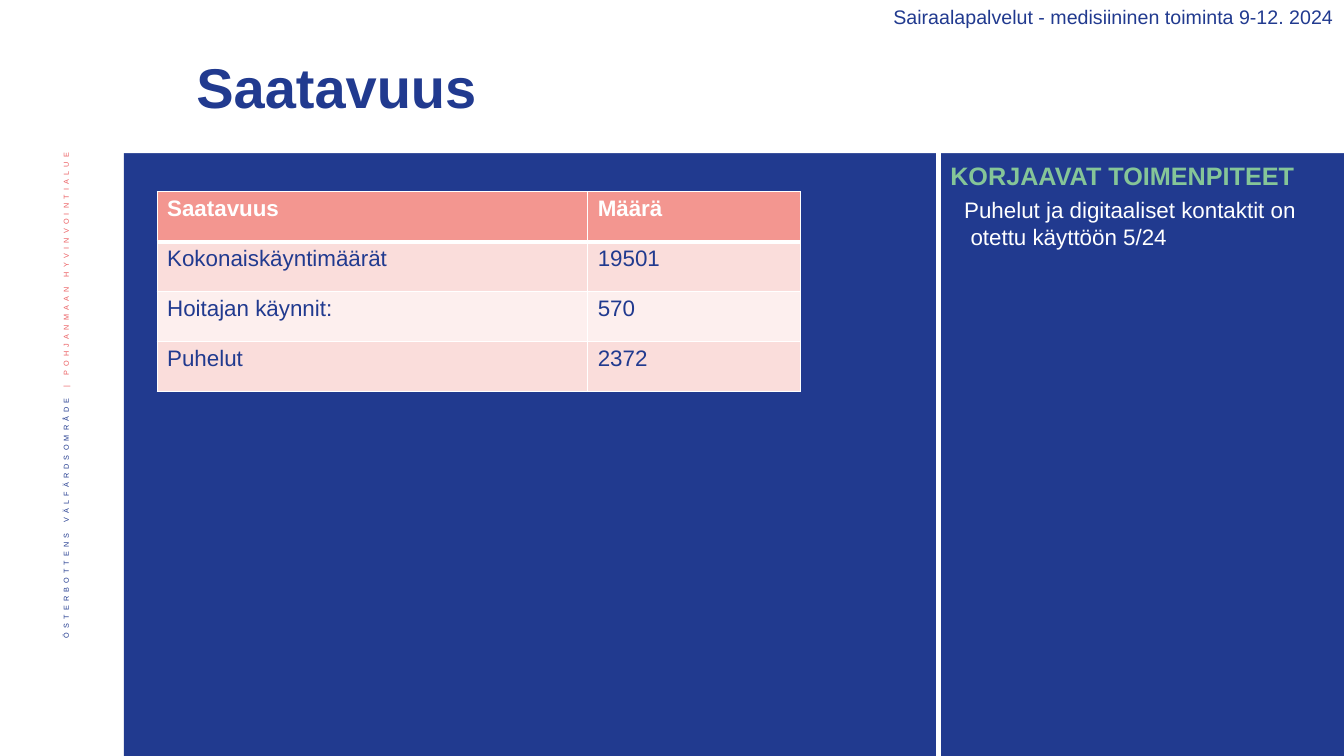
from dataclasses import dataclass

from lxml import etree
from pptx import Presentation
from pptx.dml.color import RGBColor
from pptx.enum.shapes import MSO_CONNECTOR, MSO_SHAPE
from pptx.enum.text import MSO_ANCHOR, MSO_AUTO_SIZE, PP_ALIGN
from pptx.oxml.ns import qn
from pptx.slide import Slide
from pptx.table import _Cell
from pptx.text.text import TextFrame
from pptx.util import Cm, Pt

NAVY = RGBColor(0x21, 0x3A, 0x8F)
RED = RGBColor(0xEB, 0x5C, 0x5F)
GREEN = RGBColor(0x85, 0xC5, 0x98)
WHITE = RGBColor(0xFF, 0xFF, 0xFF)
HEADER_PINK = RGBColor(0xF3, 0x96, 0x90)
ROW_PINK = RGBColor(0xFA, 0xDD, 0xDB)
PALE_PINK = RGBColor(0xFD, 0xEF, 0xEE)

FONT = "Arial"
LEFT, RIGHT = PP_ALIGN.LEFT, PP_ALIGN.RIGHT
TOP, MIDDLE = MSO_ANCHOR.TOP, MSO_ANCHOR.MIDDLE
RECTANGLE = MSO_SHAPE.RECTANGLE
STRAIGHT = MSO_CONNECTOR.STRAIGHT
GROW = MSO_AUTO_SIZE.SHAPE_TO_FIT_TEXT
FIXED = MSO_AUTO_SIZE.NONE

SLIDE_WIDTH, SLIDE_HEIGHT = 33.87, 19.05
COLUMN_WIDTHS = (10.85, 5.36)
ROW_HEIGHT = 1.26
AVAILABILITY = (
    ("Saatavuus", "Määrä"),
    ("Kokonaiskäyntimäärät", "19501"),
    ("Hoitajan käynnit:", "570"),
    ("Puhelut", "2372"),
)


@dataclass(frozen=True)
class Box:
    """Position and size in centimetres."""
    left: float
    top: float
    width: float
    height: float

    def lengths(self) -> tuple[Cm, Cm, Cm, Cm]:
        return Cm(self.left), Cm(self.top), Cm(self.width), Cm(self.height)


@dataclass(frozen=True)
class Panel:
    box: Box
    color: RGBColor


@dataclass(frozen=True)
class Label:
    """A text box; each line holds (text, colour) runs."""
    box: Box
    lines: tuple[tuple[tuple[str, RGBColor], ...], ...]
    size: float
    bold: bool = False
    align: PP_ALIGN = LEFT
    anchor: MSO_ANCHOR = TOP
    wrap: bool = True
    grow: bool = True
    line_spacing: float = 1.0
    last_indent: float = 0.0
    vertical: bool = False


PANELS = (
    Panel(Box(3.12, 0, 30.75, SLIDE_HEIGHT), NAVY),
    Panel(Box(2.92, -0.03, 31.14, 3.89), WHITE),
)

LABELS = (
    Label(Box(1.07, 3.61, 1.32, 14.55),
          ((("ÖSTERBOTTENS VÄLFÄRDSOMRÅDE ", NAVY),
            ("| POHJANMAAN HYVINVOINTIALUE", RED)),),
          size=9, align=RIGHT, anchor=MIDDLE, grow=False,
          line_spacing=0.9, vertical=True),
    Label(Box(4.7, 1.19, 25.91, 2.16), ((("Saatavuus", NAVY),),),
          size=40, bold=True, anchor=MIDDLE, grow=False, line_spacing=0.9),
    Label(Box(23.7, 3.91, 10.01, 1.02),
          ((("KORJAAVAT TOIMENPITEET", GREEN),),), size=18, bold=True),
    Label(Box(19.18, 0, 14.68, 0.86),
          ((("Sairaalapalvelut - medisiininen toiminta 9-12. 2024", NAVY),),),
          size=14, align=RIGHT),
    Label(Box(24.05, 4.83, 8.97, 1.63),
          ((("Puhelut ja digitaaliset kontaktit on", WHITE),),
           (("otettu käyttöön 5/24", WHITE),)),
          size=16, wrap=False, last_indent=0.16),
)


def write_text(frame: TextFrame, lines: tuple, *, size: float,
               bold: bool = False, align: PP_ALIGN = LEFT,
               line_spacing: float = 1.0) -> None:
    for index, runs in enumerate(lines):
        paragraph = frame.add_paragraph() if index else frame.paragraphs[0]
        paragraph.alignment = align
        paragraph.line_spacing = line_spacing
        for text, color in runs:
            run = paragraph.add_run()
            run.text = text
            run.font.name = FONT
            run.font.size = Pt(size)
            run.font.bold = bold
            run.font.color.rgb = color


def turn_side_text(frame: TextFrame) -> None:
    """Run the text upwards, letter-spaced and raised."""
    frame._txBody.bodyPr.set("vert", "vert270")
    for run in frame.paragraphs[0].runs:
        properties = run.font._element
        properties.set("spc", "300")
        properties.set("baseline", "30000")


def add_label(slide: Slide, label: Label) -> None:
    frame = slide.shapes.add_textbox(*label.box.lengths()).text_frame
    frame.word_wrap = label.wrap
    frame.auto_size = GROW if label.grow else FIXED
    frame.vertical_anchor = label.anchor
    write_text(frame, label.lines, size=label.size, bold=label.bold,
               align=label.align, line_spacing=label.line_spacing)
    if label.last_indent:
        properties = frame.paragraphs[-1]._p.get_or_add_pPr()
        properties.set("marL", str(Cm(label.last_indent)))
    if label.vertical:
        turn_side_text(frame)


def add_panel(slide: Slide, panel: Panel) -> None:
    shape = slide.shapes.add_shape(RECTANGLE, *panel.box.lengths())
    shape.shadow.inherit = False
    shape.fill.solid()
    shape.fill.fore_color.rgb = panel.color
    shape.line.fill.background()


def add_divider(slide: Slide, x: float, top: float, bottom: float) -> None:
    line = slide.shapes.add_connector(STRAIGHT, Cm(x), Cm(top), Cm(x), Cm(bottom))
    line.line.color.rgb = WHITE
    line.line.width = Pt(3)
    etree.SubElement(line._element.spPr, qn("a:effectLst"))


def set_borders(cell: _Cell, top: float, bottom: float) -> None:
    """Draw white borders; the side borders are one point wide."""
    properties = cell._tc.get_or_add_tcPr()
    for side, width in (("L", 1), ("R", 1), ("T", top), ("B", bottom)):
        line = etree.SubElement(properties, qn(f"a:ln{side}"), w=str(Pt(width)))
        fill = etree.SubElement(line, qn("a:solidFill"))
        etree.SubElement(fill, qn("a:srgbClr"), val=str(WHITE))


def add_availability_table(slide: Slide) -> None:
    box = Box(3.96, 4.83, sum(COLUMN_WIDTHS), ROW_HEIGHT * len(AVAILABILITY))
    table = slide.shapes.add_table(
        len(AVAILABILITY), len(COLUMN_WIDTHS), *box.lengths()).table
    for column, width in zip(table.columns, COLUMN_WIDTHS):
        column.width = Cm(width)
    for row_index, values in enumerate(AVAILABILITY):
        table.rows[row_index].height = Cm(ROW_HEIGHT)
        header = row_index == 0
        band = ROW_PINK if row_index % 2 else PALE_PINK
        for column_index, value in enumerate(values):
            cell = table.cell(row_index, column_index)
            set_borders(cell, top=3 if row_index == 1 else 1,
                        bottom=3 if header else 1)
            cell.fill.solid()
            cell.fill.fore_color.rgb = HEADER_PINK if header else band
            write_text(cell.text_frame, (((value, WHITE if header else NAVY),),),
                       size=16, bold=header)


def main() -> None:
    presentation = Presentation()
    presentation.slide_width = Cm(SLIDE_WIDTH)
    presentation.slide_height = Cm(SLIDE_HEIGHT)
    slide = presentation.slides.add_slide(presentation.slide_layouts[6])
    for panel in PANELS:
        add_panel(slide, panel)
    add_divider(slide, 23.65, 2.46, SLIDE_HEIGHT)
    for label in LABELS:
        add_label(slide, label)
    add_availability_table(slide)
    presentation.save("out.pptx")


if __name__ == "__main__":
    main()
